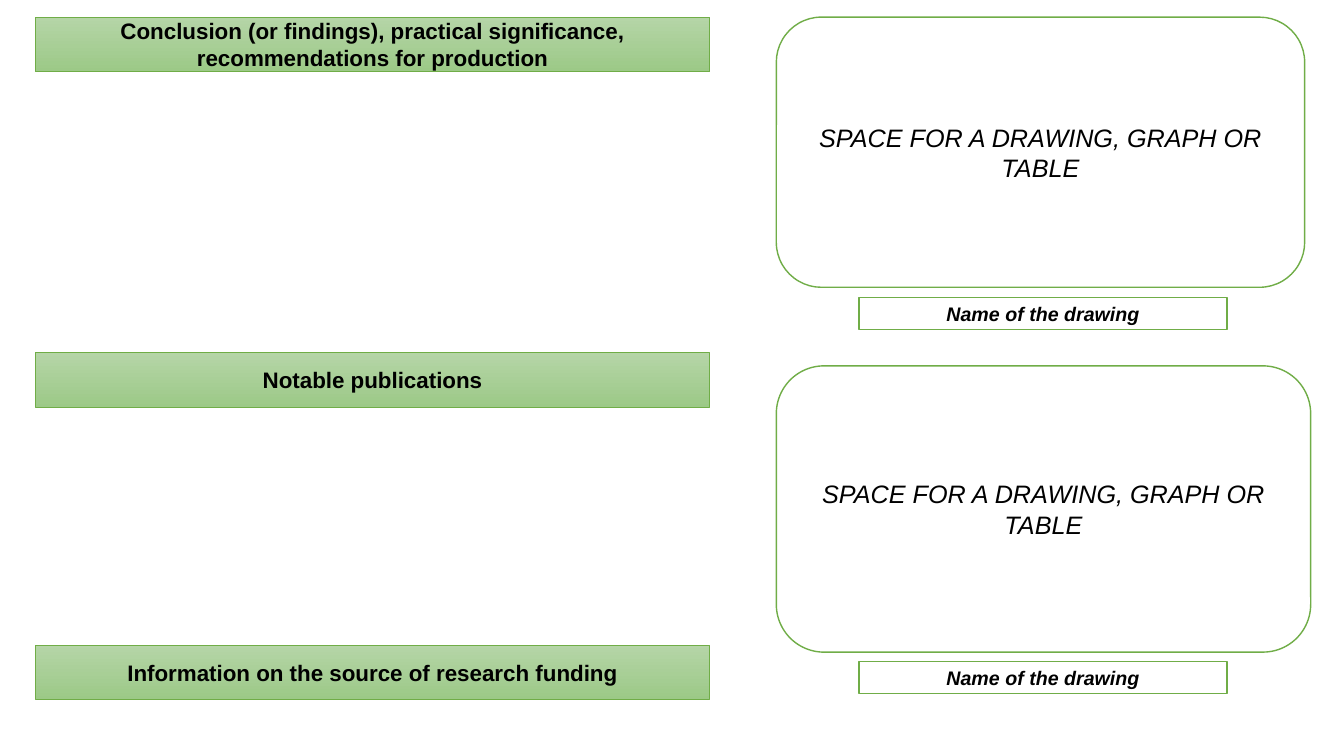
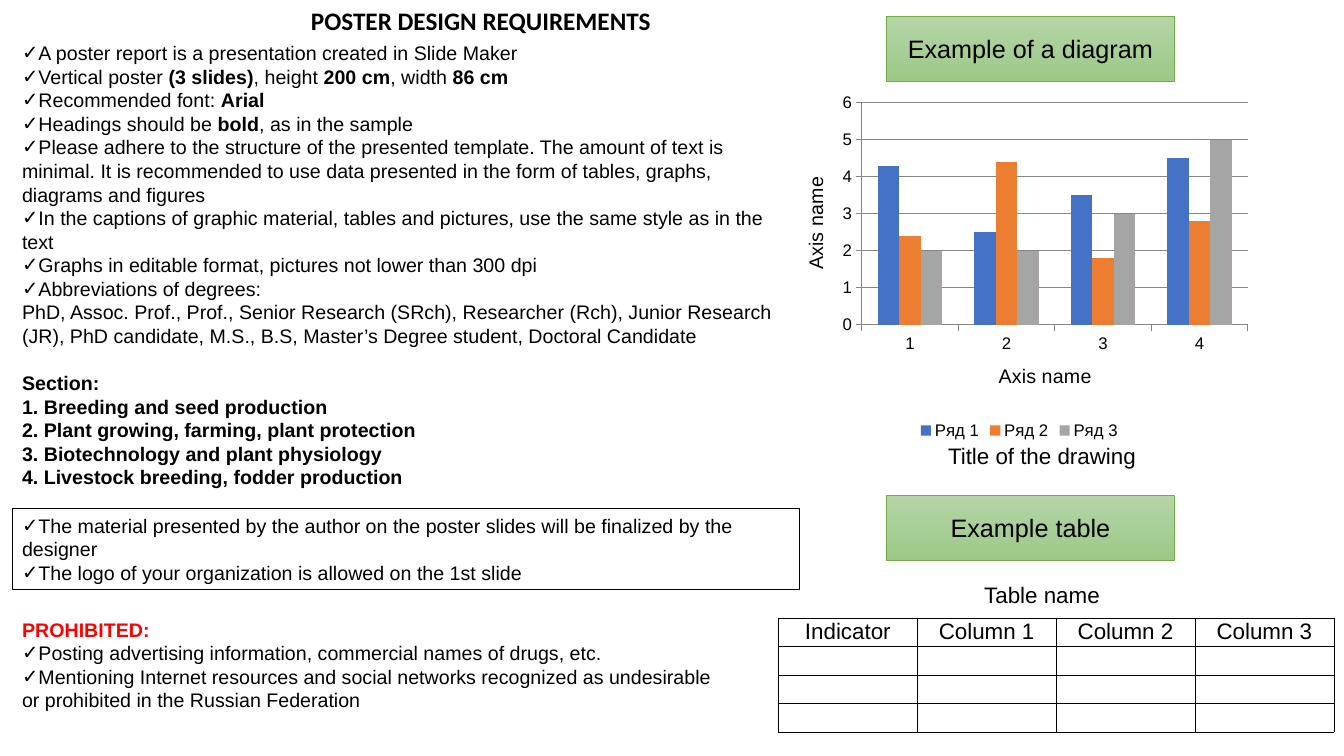
from lxml import etree
from pptx import Presentation
from pptx.chart.data import CategoryChartData
from pptx.dml.color import RGBColor
from pptx.enum.chart import XL_CHART_TYPE as CT, XL_LEGEND_POSITION as LP, XL_TICK_MARK as TM
from pptx.enum.shapes import MSO_SHAPE as SHP
from pptx.enum.text import MSO_ANCHOR as ANC, PP_ALIGN as AL
from pptx.oxml.ns import qn
from pptx.util import Inches, Pt

BLACK = RGBColor(0x00, 0x00, 0x00)
WHITE = RGBColor(0xFF, 0xFF, 0xFF)
RED = RGBColor(0xFF, 0x00, 0x00)
GREEN = RGBColor(0x70, 0xAD, 0x47)
GREEN_TOP = RGBColor(0xB5, 0xD5, 0xA7)
GREEN_BOTTOM = RGBColor(0x9C, 0xC9, 0x87)
GRID = RGBColor(0x87, 0x87, 0x87)
SERIES = [RGBColor(0x44, 0x72, 0xC4), RGBColor(0xED, 0x7D, 0x31), RGBColor(0xA5, 0xA5, 0xA5)]
FONT = "Arial"


def style(font, size, bold=False, italic=False, color=BLACK, name=FONT):
    font.size, font.name = Pt(size), name
    font.bold, font.italic = bold, italic
    font.color.rgb = color


def write(p, text, size=14, align=AL.CENTER, bold=False, bullet=None, before=0, **fmt):
    """Fill a paragraph; text between ** marks is bold."""
    p.alignment = align
    if before:
        p.space_before = Pt(before)
    if bullet:
        pPr = p._p.get_or_add_pPr()
        etree.SubElement(pPr, qn("a:buFont"), typeface=FONT)
        etree.SubElement(pPr, qn("a:buChar"), char=bullet)
    for i, part in enumerate(text.split("**")):
        if part:
            r = p.add_run()
            r.text = part
            style(r.font, size, bold=bold or i % 2 == 1, **fmt)


class Poster:
    def __init__(self):
        self.prs = Presentation()
        self.prs.slide_width, self.prs.slide_height = Inches(13.33), Inches(7.5)
        self.s = None

    def new_slide(self):
        self.s = self.prs.slides.add_slide(self.prs.slide_layouts[6])

    def box(self, x, y, w, h, kind=SHP.RECTANGLE, line=GREEN, width=1, fill=WHITE):
        sp = self.s.shapes.add_shape(kind, Inches(x), Inches(y), Inches(w), Inches(h))
        sp.shadow.inherit = False
        sp.line.color.rgb, sp.line.width = line, Pt(width)
        if fill is None:
            sp.fill.background()
        else:
            sp.fill.solid()
            sp.fill.fore_color.rgb = fill
        sp.text_frame.word_wrap = True
        sp.text_frame.vertical_anchor = ANC.MIDDLE
        return sp

    def band(self, x, y, w, h, text, **fmt):
        sp = self.box(x, y, w, h, width=0.5)
        sp.fill.gradient()
        sp.fill.gradient_angle = 270
        for stop, color in zip(sp.fill.gradient_stops, (GREEN_TOP, GREEN_BOTTOM)):
            stop.color.rgb = color
        write(sp.text_frame.paragraphs[0], text, **fmt)

    def drawing_space(self, y, w, h, caption_y):
        frame = self.box(7.7, y, w, h, SHP.ROUNDED_RECTANGLE)
        write(frame.text_frame.paragraphs[0], "SPACE FOR A DRAWING, GRAPH OR TABLE",
              size=18, italic=True)
        caption = self.box(8.52, caption_y, 3.65, 0.32)
        write(caption.text_frame.paragraphs[0], "Name of the drawing", bold=True, italic=True)

    def label(self, x, y, w, h, text, wrap=True, **fmt):
        tf = self.text_box(x, y, w, h)
        tf.word_wrap = wrap
        write(tf.paragraphs[0], text, **fmt)

    def text_box(self, x, y, w, h):
        tf = self.s.shapes.add_textbox(Inches(x), Inches(y), Inches(w), Inches(h)).text_frame
        tf.word_wrap = True
        return tf

    def lines(self, tf, items):
        """Left-aligned paragraphs from (text, format) pairs."""
        for i, (text, fmt) in enumerate(items):
            p = tf.add_paragraph() if i else tf.paragraphs[0]
            write(p, text, align=AL.LEFT, **fmt)

    def column_chart(self, x, y, w, h, cats, series, axis_title):
        data = CategoryChartData()
        data.categories = cats
        for name, values in series:
            data.add_series(name, values)
        chart = self.s.shapes.add_chart(CT.COLUMN_CLUSTERED, Inches(x), Inches(y),
                                        Inches(w), Inches(h), data).chart
        style(chart.font, 14)
        chart.has_title = False
        chart.has_legend = True
        chart.legend.position, chart.legend.include_in_layout = LP.BOTTOM, False
        style(chart.legend.font, 12)
        plot = chart.plots[0]
        plot.vary_by_categories, plot.gap_width, plot.overlap = False, 150, 0
        for ser, color in zip(plot.series, SERIES):
            ser.format.fill.solid()
            ser.format.fill.fore_color.rgb = color
        for axis in (chart.category_axis, chart.value_axis):
            write(axis.axis_title.text_frame.paragraphs[0], axis_title)
            style(axis.tick_labels.font, 12)
            axis.major_tick_mark = TM.OUTSIDE
            axis.format.line.color.rgb = GRID
        axis = chart.value_axis
        axis.minimum_scale, axis.maximum_scale, axis.major_unit = 0, 6, 1
        axis.major_gridlines.format.line.color.rgb = GRID

    def grid_table(self, x, y, w, h, heads, rows):
        table = self.s.shapes.add_table(rows, len(heads), Inches(x), Inches(y),
                                        Inches(w), Inches(h)).table
        table.first_row = table.horz_banding = False
        for row in table.rows:
            row.height = Inches(h / rows)
        for i, cell in enumerate(table.iter_cells()):
            self.borders(cell)
            cell.fill.background()
            cell.vertical_anchor = ANC.MIDDLE
            cell.margin_left = cell.margin_right = Inches(0.07)
            cell.margin_top = cell.margin_bottom = 0
            p = cell.text_frame.paragraphs[0]
            if i < len(heads):
                write(p, heads[i], size=16)
            else:
                etree.SubElement(p._p, qn("a:endParaRPr"), sz="1200")

    def borders(self, cell):
        tcPr = cell._tc.get_or_add_tcPr()
        for side in "LRTB":
            ln = etree.SubElement(tcPr, qn(f"a:ln{side}"), w=str(Pt(0.25)))
            fill = etree.SubElement(ln, qn("a:solidFill"))
            etree.SubElement(fill, qn("a:srgbClr"), val=str(BLACK))


TICK = {"bullet": "✓"}
BOLD = {"bold": True}

REQUIREMENTS = [
    "A poster report is a presentation created in Slide Maker",
    "Vertical poster **(3 slides)**, height **200 cm**, width **86 cm**",
    "Recommended font: **Arial**",
    "Headings should be **bold**, as in the sample",
    "Please adhere to the structure of the presented template. The amount of text is minimal. "
    "It is recommended to use data presented in the form of tables, graphs, diagrams and figures",
    "In the captions of graphic material, tables and pictures, use the same style as in the text",
    "Graphs in editable format, pictures not lower than 300 dpi",
    "Abbreviations of degrees:",
]
DEGREES = ("PhD, Assoc. Prof., Prof., Senior Research (SRch), Researcher (Rch), Junior Research "
           "(JR), PhD candidate, M.S., B.S, Master’s Degree student, Doctoral Candidate")
SECTIONS = [
    "1. Breeding and seed production",
    "2. Plant growing, farming, plant protection",
    "3. Biotechnology and plant physiology",
    "4. Livestock breeding, fodder production",
]
AUTHOR_NOTES = [
    "The material presented by the author on the poster slides will be finalized by the designer",
    "The logo of your organization is allowed on the 1st slide",
]
PROHIBITED = [
    "Posting advertising information, commercial names of drugs, etc.",
    "Mentioning Internet resources and social networks recognized as undesirable "
    "or prohibited in the Russian Federation",
]


def conclusion_slide(poster):
    poster.new_slide()
    # Section headings
    for y, text in [
        (0.17, "Conclusion (or findings), practical significance, recommendations for production"),
        (3.5, "Notable publications"),
        (6.4, "Information on the source of research funding"),
    ]:
        poster.band(0.35, y, 6.69, 0.54, text, size=16, bold=True)
    # Drawing spaces with captions
    poster.drawing_space(0.17, 5.24, 2.68, 2.95)
    poster.drawing_space(3.63, 5.3, 2.84, 6.56)


def requirements_slide(poster):
    poster.new_slide()
    # Requirements
    poster.label(2.97, 0, 3.6, 0.4, "POSTER DESIGN REQUIREMENTS", wrap=False,
                 size=18, bold=True, name="Calibri")
    poster.lines(poster.text_box(0.12, 0.36, 7.82, 4.58),
                 [(t, TICK) for t in REQUIREMENTS] + [(DEGREES, {})]
                 + [("Section:", {"bold": True, "before": 17})]
                 + [(t, BOLD) for t in SECTIONS])
    # Framed notes
    notes = poster.box(0.12, 5.04, 7.81, 0.81, line=BLACK, width=0.75, fill=None)
    poster.lines(notes.text_frame, [(t, TICK) for t in AUTHOR_NOTES])
    # Prohibitions
    poster.lines(poster.text_box(0.12, 6.08, 7.05, 1.04),
                 [("PROHIBITED:", {"bold": True, "color": RED})]
                 + [(t, TICK) for t in PROHIBITED])
    # Example diagram
    poster.band(8.79, 0.16, 2.86, 0.65, "Example of a diagram", size=18)
    poster.column_chart(7.75, 0.86, 4.72, 3.54, ["1", "2", "3", "4"], [
        ("Ряд 1", (4.3, 2.5, 3.5, 4.5)),
        ("Ряд 2", (2.4, 4.4, 1.8, 2.8)),
        ("Ряд 3", (2, 2, 3, 5)),
    ], "Axis name")
    poster.label(8.52, 4.34, 3.63, 0.37, "Title of the drawing", size=16)
    # Example table
    poster.band(8.79, 4.91, 2.86, 0.65, "Example table", size=18)
    poster.label(8.52, 5.72, 3.63, 0.37, "Table name", size=16)
    poster.grid_table(7.72, 6.13, 5.51, 1.13,
                      ["Indicator", "Column 1", "Column 2", "Column 3"], rows=4)


def main():
    poster = Poster()
    conclusion_slide(poster)
    requirements_slide(poster)
    poster.prs.save("out.pptx")


if __name__ == "__main__":
    main()
